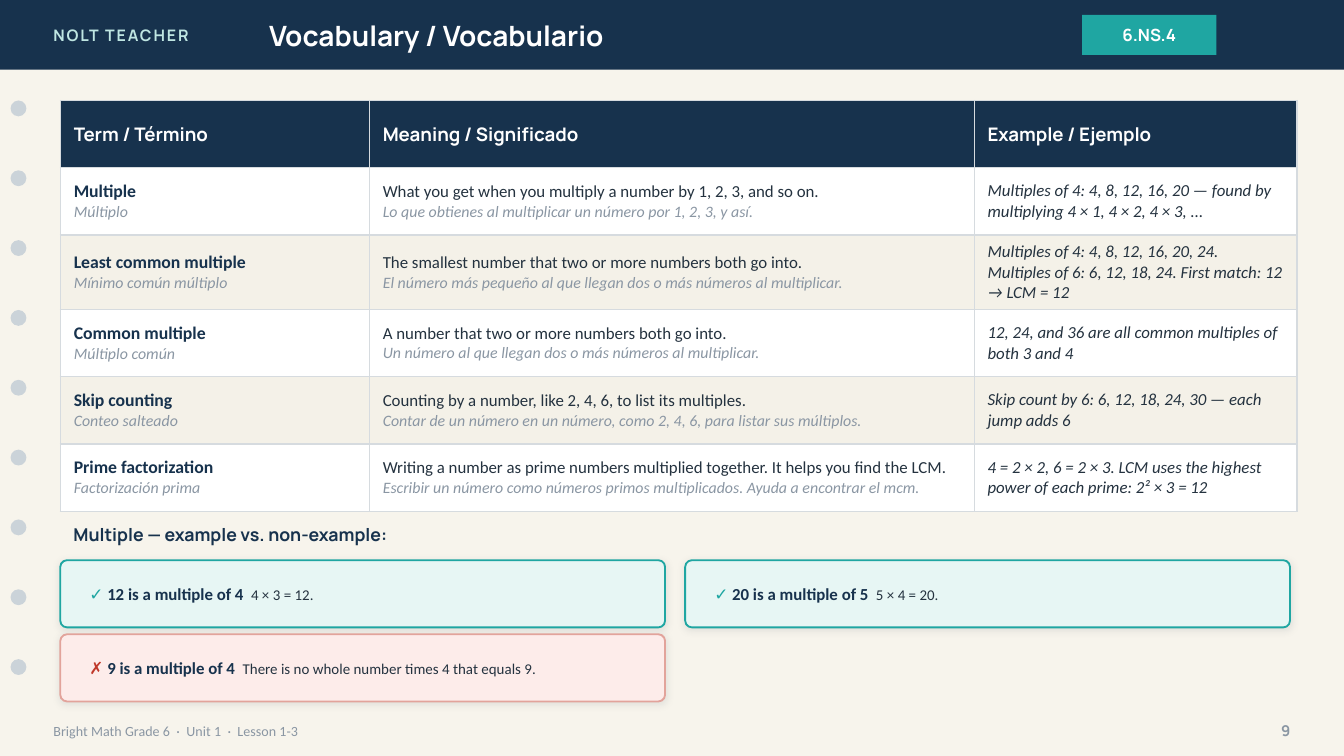
"""Build a bilingual vocabulary slide about multiples."""
from dataclasses import dataclass

import pptx
import pptx.dml.color
import pptx.enum.shapes
import pptx.enum.text
import pptx.oxml
import pptx.oxml.ns
import pptx.slide
import pptx.util

Cm = pptx.util.Cm
KIND = pptx.enum.shapes.MSO_SHAPE
SIDE = pptx.enum.text.PP_ALIGN
NS = pptx.oxml.ns.nsdecls("a")

TERMS = [
    ("Multiple", "Múltiplo",
     "What you get when you multiply a number by 1, 2, 3, and so on.",
     "Lo que obtienes al multiplicar un número por 1, 2, 3, y así.",
     "Multiples of 4: 4, 8, 12, 16, 20 — found by multiplying 4 × 1, 4 × 2, 4 × 3, ..."),
    ("Least common multiple", "Mínimo común múltiplo",
     "The smallest number that two or more numbers both go into.",
     "El número más pequeño al que llegan dos o más números al multiplicar.",
     "Multiples of 4: 4, 8, 12, 16, 20, 24. Multiples of 6: 6, 12, 18, 24. First match: 12 → LCM = 12"),
    ("Common multiple", "Múltiplo común",
     "A number that two or more numbers both go into.",
     "Un número al que llegan dos o más números al multiplicar.",
     "12, 24, and 36 are all common multiples of both 3 and 4"),
    ("Skip counting", "Conteo salteado",
     "Counting by a number, like 2, 4, 6, to list its multiples.",
     "Contar de un número en un número, como 2, 4, 6, para listar sus múltiplos.",
     "Skip count by 6: 6, 12, 18, 24, 30 — each jump adds 6"),
    ("Prime factorization", "Factorización prima",
     "Writing a number as prime numbers multiplied together. It helps you find the LCM.",
     "Escribir un número como números primos multiplicados. Ayuda a encontrar el mcm.",
     "4 = 2 × 2, 6 = 2 × 3. LCM uses the highest power of each prime: 2² × 3 = 12"),
]
CARDS = [
    (True, "12 is a multiple of 4  ", "4 × 3 = 12."),
    (True, "20 is a multiple of 5  ", "5 × 4 = 20."),
    (False, "9 is a multiple of 4  ", "There is no whole number times 4 that equals 9."),
]


def rgb(code):
    return pptx.dml.color.RGBColor.from_string(code)


def paint(fill, code):
    fill.solid()
    fill.fore_color.rgb = rgb(code)


def write(para, text, size, color, face="Calibri", bold=False, italic=False, gap=0):
    run = para.add_run()
    run.text = text
    font = run.font
    font.size, font.name = pptx.util.Pt(size), face
    font.bold, font.italic = bold, italic
    font.color.rgb = rgb(color)
    if gap:
        run._r.get_or_add_rPr().set("spc", str(gap * 100))


@dataclass
class Deck:
    slide: pptx.slide.Slide
    navy: str = "17324D"
    ink: str = "24323F"
    gray: str = "8A96A3"
    teal: str = "1FA6A2"
    white: str = "FFFFFF"
    head: str = "Manrope"

    def frame(self, shape, align=SIDE.LEFT):
        frame = shape.text_frame
        frame.word_wrap = True
        frame.auto_size = pptx.enum.text.MSO_AUTO_SIZE.NONE
        frame.vertical_anchor = pptx.enum.text.MSO_ANCHOR.MIDDLE
        para = frame.paragraphs[0]
        para.alignment = align
        return para

    def title(self, text, *box):
        shape = self.slide.shapes.title
        shape.left, shape.top, shape.width, shape.height = map(Cm, box)
        shape.element.getparent().append(shape.element)
        write(self.frame(shape), text, 15, self.white, self.head, True)

    def label(self, runs, *box, align=SIDE.LEFT):
        para = self.frame(self.slide.shapes.add_textbox(*map(Cm, box)), align)
        for text, style in runs:
            write(para, text, **style)

    def block(self, kind, color, *box, line=None):
        shape = self.slide.shapes.add_shape(kind, *map(Cm, box))
        shape.shadow.inherit = False
        paint(shape.fill, color)
        if line:
            shape.line.color.rgb = rgb(line)
            shape.line.width = pptx.util.Pt(1)
        else:
            shape.line.fill.background()
        return shape

    def badge(self, text, *box):
        shape = self.block(KIND.RECTANGLE, self.teal, *box)
        write(self.frame(shape, SIDE.CENTER), text, 9, self.white, self.head, True)

    def card(self, good, claim, why, x, y, w, h):
        fill, line, mark, tint = (("E7F6F4", self.teal, "✓ ", self.teal) if good
                                  else ("FDECEA", "E2A39B", "✗ ", "C0392B"))
        shape = self.block(KIND.ROUNDED_RECTANGLE, fill, x, y, w, h, line=line)
        shape.adjustments[0] = 0.1
        shape.element.spPr.find(pptx.oxml.ns.qn("a:effectLst")).append(pptx.oxml.parse_xml(
            f'<a:outerShdw {NS} blurRad="50800" dist="12700" dir="5400000" algn="bl" rotWithShape="0">'
            '<a:srgbClr val="1C2E42"><a:alpha val="10000"/></a:srgbClr></a:outerShdw>'))
        self.label([(mark, dict(size=9, color=tint, bold=True)),
                    (claim, dict(size=9, color=self.navy, bold=True)),
                    (why, dict(size=8, color=self.ink))],
                   x + 0.3, y, w - 0.6, h)

    def cell(self, cell, fill, *lines):
        for side in "LRTB":
            cell._tc.get_or_add_tcPr().append(pptx.oxml.parse_xml(
                f'<a:ln{side} {NS} w="9525"><a:solidFill><a:srgbClr val="D6DBDF"/>'
                f'</a:solidFill></a:ln{side}>'))
        paint(cell.fill, fill)
        cell.vertical_anchor = pptx.enum.text.MSO_ANCHOR.MIDDLE
        frame = cell.text_frame
        for i, (text, style) in enumerate(lines):
            para = frame.add_paragraph() if i else frame.paragraphs[0]
            write(para, text, **style)

    def table(self, heads, rows, x, y, widths, high):
        count = len(rows) + 1
        table = self.slide.shapes.add_table(
            count, len(heads), Cm(x), Cm(y), Cm(sum(widths)), Cm(high * count)).table
        table.first_row = table.horz_banding = False
        for col, wide in zip(table.columns, widths):
            col.width = Cm(wide)
        for row in table.rows:
            row.height = Cm(high)
        top = dict(size=10, color=self.white, face=self.head, bold=True)
        for c, text in enumerate(heads):
            self.cell(table.cell(0, c), self.navy, (text, top))
        term = dict(size=9.5, color=self.navy, bold=True)
        plain = dict(size=9, color=self.ink)
        other = dict(size=8.5, color=self.gray, italic=True)
        for r, (name, nombre, sense, sentido, case) in enumerate(rows, 1):
            fill = self.white if r % 2 else "F4F1E8"
            self.cell(table.cell(r, 0), fill, (name, term), (nombre, other))
            self.cell(table.cell(r, 1), fill, (sense, plain), (sentido, other))
            self.cell(table.cell(r, 2), fill, (case, plain | dict(italic=True)))


def main():
    show = pptx.Presentation()
    show.slide_width, show.slide_height = Cm(25.4), Cm(14.29)
    deck = Deck(show.slides.add_slide(show.slide_layouts[5]))
    paint(deck.slide.background.fill, "F7F4EC")

    deck.block(KIND.RECTANGLE, deck.navy, 0, 0, 25.4, 1.32)
    deck.label([("NOLT TEACHER", dict(size=8.5, color="BFE6E2", face=deck.head, bold=True, gap=1))],
               0.76, 0, 6.1, 1.32)
    deck.title("Vocabulary / Vocabulario", 4.83, 0, 14.22, 1.32)
    deck.badge("6.NS.4", 20.45, 0.28, 2.54, 0.76)
    for i in range(9):
        deck.block(KIND.OVAL, "CBD3D9", 0.2, 1.9 + 1.32 * i, 0.3, 0.3)

    deck.label([("Bright Math Grade 6  ·  Unit 1  ·  Lesson 1-3", dict(size=7.5, color=deck.gray))],
               0.76, 13.46, 17.78, 0.71)
    deck.label([("9", dict(size=8, color=deck.gray, face=deck.head, bold=True))],
               23.37, 13.46, 1.27, 0.71, align=SIDE.RIGHT)

    deck.table(("Term / Término", "Meaning / Significado", "Example / Ejemplo"),
               TERMS, 1.14, 1.9, (5.84, 11.43, 6.1), 1.27)
    deck.label([("Multiple — example vs. non-example:",
                 dict(size=9.5, color=deck.navy, face=deck.head, bold=True))],
               1.14, 9.78, 23.37, 0.66)
    for i, card in enumerate(CARDS):
        row, col = divmod(i, 2)
        deck.card(*card, 1.14 + 11.81 * col, 10.59 + 1.4 * row, 11.43, 1.27)
    show.save("out.pptx")


if __name__ == "__main__":
    main()
